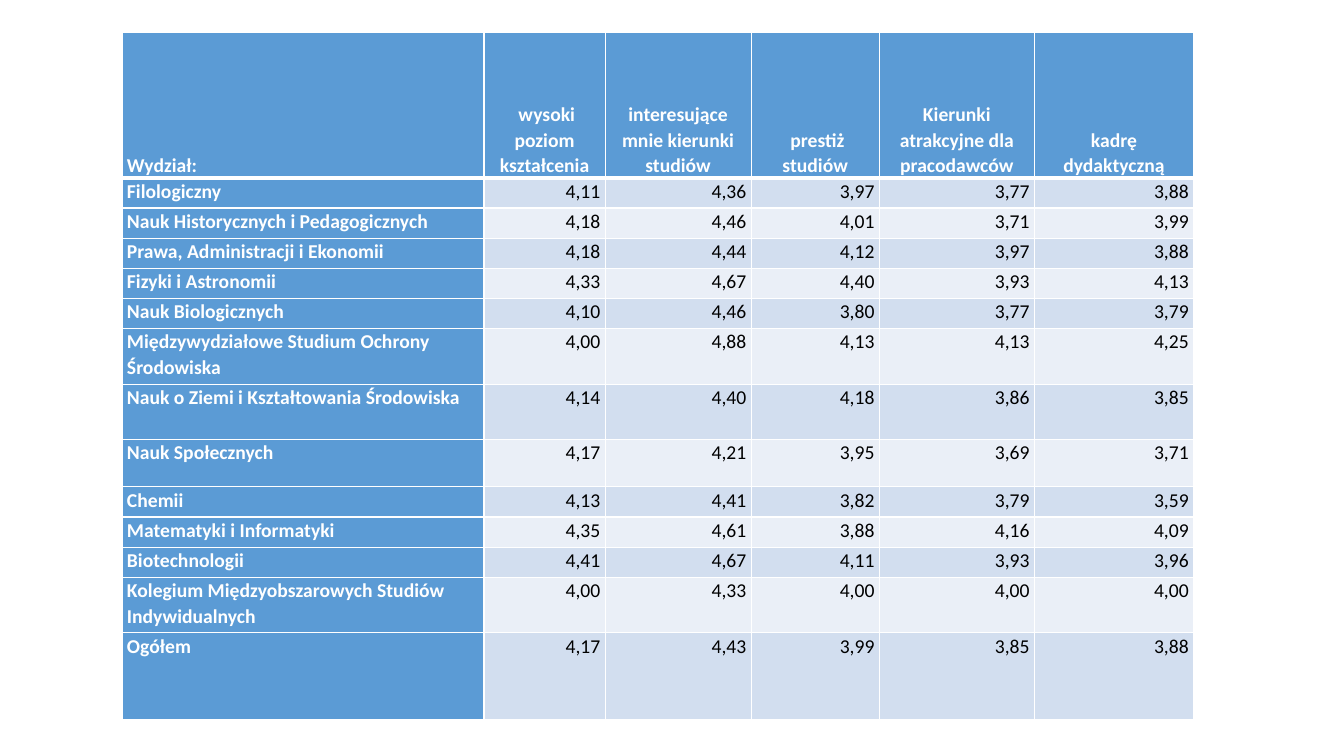
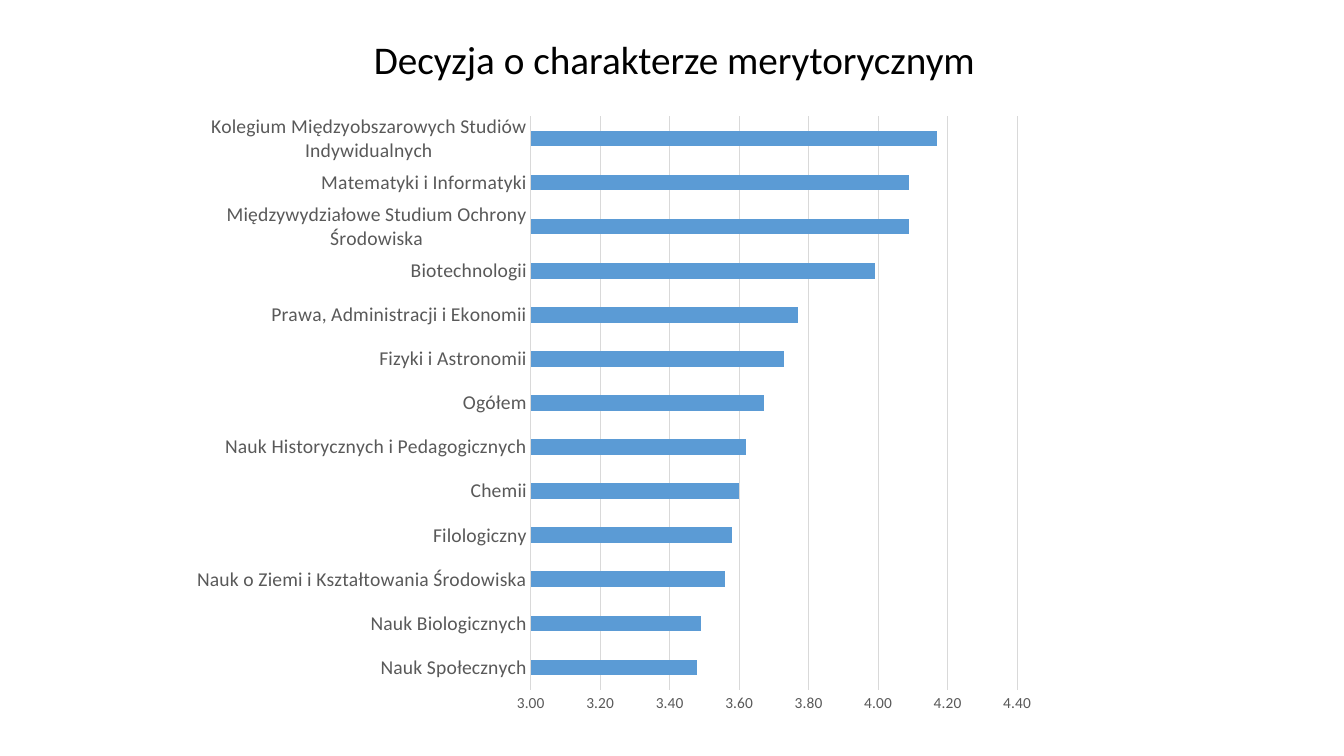
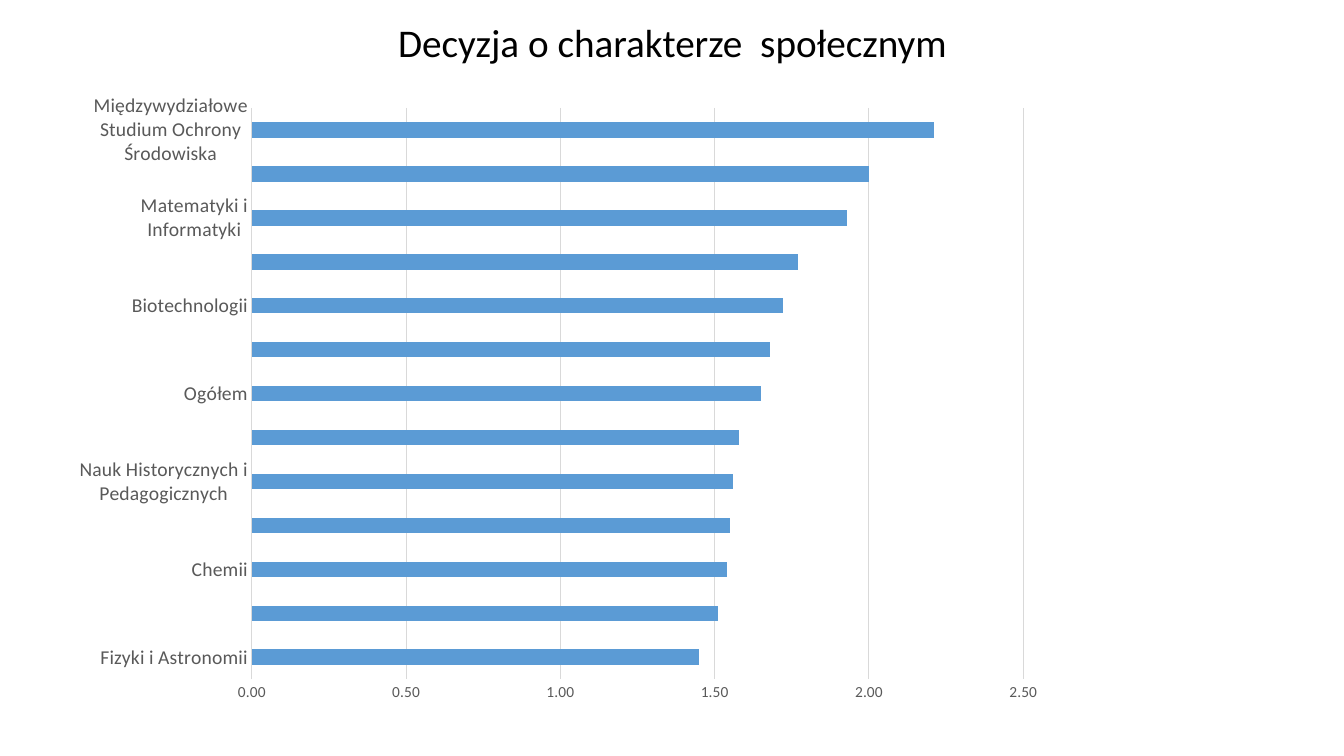
from dataclasses import dataclass
from typing import Any

from lxml.etree import SubElement as Sub
from pptx import Presentation
from pptx.chart.data import CategoryChartData as ChartData
from pptx.dml.color import RGBColor
from pptx.enum.chart import XL_CHART_TYPE as Kind, XL_TICK_MARK as Tick
from pptx.enum.text import MSO_ANCHOR as Anchor, MSO_AUTO_SIZE as Fit, PP_ALIGN as Align
from pptx.oxml import parse_xml
from pptx.oxml.ns import nsdecls, qn
from pptx.util import Cm, Pt

FONT = "Calibri"
BLUE, WHITE, BLACK = "5B9BD5", "FFFFFF", "000000"
GREY, RULE = "595959", "D9D9D9"
BANDS = ("D2DEEF", "EAEFF7")

HEADS = (
    "Wydział:",
    " wysoki poziom kształcenia",
    "interesujące mnie kierunki studiów",
    " prestiż studiów",
    "Kierunki atrakcyjne dla pracodawców",
    "kadrę dydaktyczną",
)
WIDTHS = (9.12, 3.05, 3.68, 3.23, 3.91, 4.01)
HEAD_HIGH = 3.66
LOW, TALL = 0.76, 1.4


@dataclass(frozen=True)
class Unit:
    """A faculty: its table row and its value in each chart."""
    name: str
    marks: str
    merit: float
    social: float
    high: float = LOW


UNITS = (
    Unit("Filologiczny", "4,11 4,36 3,97 3,77 3,88", 3.58, 1.58),
    Unit("Nauk Historycznych i Pedagogicznych", "4,18 4,46 4,01 3,71 3,99", 3.62, 1.56),
    Unit("Prawa, Administracji i Ekonomii", "4,18 4,44 4,12 3,97 3,88", 3.77, 1.77),
    Unit("Fizyki i Astronomii", "4,33 4,67 4,40 3,93 4,13", 3.73, 1.45),
    Unit("Nauk Biologicznych", "4,10 4,46 3,80 3,77 3,79", 3.49, 1.55),
    Unit("Międzywydziałowe Studium Ochrony Środowiska", "4,00 4,88 4,13 4,13 4,25",
         4.09, 2.21, TALL),
    Unit("Nauk o Ziemi i Kształtowania Środowiska", "4,14 4,40 4,18 3,86 3,85",
         3.56, 1.68, TALL),
    Unit("Nauk Społecznych", "4,17 4,21 3,95 3,69 3,71", 3.48, 1.51, 1.19),
    Unit("Chemii", "4,13 4,41 3,82 3,79 3,59", 3.6, 1.54),
    Unit("Matematyki i Informatyki", "4,35 4,61 3,88 4,16 4,09", 4.09, 1.93),
    Unit("Biotechnologii", "4,41 4,67 4,11 3,93 3,96", 3.99, 1.72),
    Unit("Kolegium Międzyobszarowych Studiów Indywidualnych", "4,00 4,33 4,00 4,00 4,00",
         4.17, 2.0, TALL),
    Unit("Ogółem", "4,17 4,43 3,99 3,85 3,88", 3.67, 1.65, 2.18),
)


@dataclass(frozen=True)
class Box:
    left: float
    top: float
    width: float
    height: float

    def cm(self) -> tuple[Cm, ...]:
        return tuple(map(Cm, (self.left, self.top, self.width, self.height)))


@dataclass(frozen=True)
class Page:
    """A chart slide; plot is given as shares of the chart's frame."""
    title: str
    head: Box
    frame: Box
    plot: Box
    field: str
    low: float
    top: float
    step: float


PAGES = (
    Page("Decyzja o charakterze merytorycznym", Box(2.39, 0.51, 29.21, 2.11),
         Box(4.62, 2.62, 21.89, 15.7), Box(0.4, 0.02, 0.56, 0.92), "merit", 3, 4.4, 0.2),
    Page("Decyzja o charakterze  społecznym", Box(2.34, 0.41, 29.21, 1.42),
         Box(1.55, 2.08, 25.25, 16), Box(0.19, 0.04, 0.77, 0.9), "social", 0, 2.5, 0.5),
)


def rgb(code: str) -> RGBColor:
    return RGBColor.from_string(code)


def put(item: Any, values: dict[str, Any]) -> None:
    for key, value in values.items():
        setattr(item, key, value)


def style(font: Any, size: float, color: str, bold: bool = False) -> None:
    put(font, {"name": FONT, "size": Pt(size), "bold": bold})
    font.color.rgb = rgb(color)


def paint(fill: Any, color: str) -> None:
    fill.solid()
    fill.fore_color.rgb = rgb(color)


def rule(line: Any) -> None:
    line.width = Pt(0.75)
    line.color.rgb = rgb(RULE)


def edge(cell: Any, row: int) -> None:
    """Draw white cell borders, thick between the heading and the body."""
    props = cell._tc.get_or_add_tcPr()
    thick = {"T": row == 1, "B": row == 0}
    for place, side in enumerate("LRTB"):
        width = Pt(3 if thick.get(side) else 1)
        props.insert(place, parse_xml(
            f'<a:ln{side} {nsdecls("a")} w="{width}"><a:solidFill>'
            f'<a:srgbClr val="{WHITE}"/></a:solidFill></a:ln{side}>'))


def fill_cell(cell: Any, text: str, row: int, col: int) -> None:
    head = row == 0
    label = head or col == 0
    put(cell, {
        "text": text,
        "vertical_anchor": Anchor.BOTTOM if head else Anchor.TOP,
        "margin_left": Cm(0.12), "margin_right": Cm(0.12),
        "margin_top": 0, "margin_bottom": 0,
    })
    para = cell.text_frame.paragraphs[0]
    side = Align.LEFT if col == 0 else Align.CENTER if head else Align.RIGHT
    put(para, {"alignment": side, "line_spacing": 1.07})
    style(para.runs[0].font, 14, WHITE if label else BLACK, label)
    paint(cell.fill, BLUE if label else BANDS[(row - 1) % 2])
    edge(cell, row)


def add_grid(slide: Any) -> None:
    rows = [HEADS] + [(unit.name, *unit.marks.split()) for unit in UNITS]
    highs = [HEAD_HIGH] + [unit.high for unit in UNITS]
    frame = Box(3.08, 0.82, sum(WIDTHS), sum(highs))
    grid = slide.shapes.add_table(len(rows), len(HEADS), *frame.cm()).table
    for col, width in zip(grid.columns, WIDTHS):
        col.width = Cm(width)
    for line, high in zip(grid.rows, highs):
        line.height = Cm(high)
    for row, texts in enumerate(rows):
        for col, text in enumerate(texts):
            fill_cell(grid.cell(row, col), text, row, col)


def add_title(slide: Any, page: Page) -> None:
    title = slide.shapes.title
    put(title, dict(zip(("left", "top", "width", "height"), page.head.cm())))
    frame = title.text_frame
    put(frame, {"text": page.title, "auto_size": Fit.NONE, "word_wrap": True,
                "vertical_anchor": Anchor.MIDDLE})
    para = frame.paragraphs[0]
    put(para, {"alignment": Align.CENTER, "line_spacing": 0.9})
    style(para.runs[0].font, 28, BLACK)


def set_plot(chart: Any, plot: Box) -> None:
    """Fix the inner plot area."""
    area = chart.element.find(".//" + qn("c:plotArea"))
    for old in area.findall(qn("c:layout")):
        area.remove(old)
    layout = parse_xml(f'<c:layout {nsdecls("c")}/>')
    manual = Sub(layout, qn("c:manualLayout"))
    values = {"layoutTarget": "inner", "xMode": "edge", "yMode": "edge",
              "x": plot.left, "y": plot.top, "w": plot.width, "h": plot.height}
    for key, value in values.items():
        Sub(manual, qn("c:" + key)).set("val", str(value))
    area.insert(0, layout)


def add_bars(slide: Any, page: Page) -> None:
    units = sorted(UNITS, key=lambda unit: getattr(unit, page.field))
    data = ChartData(number_format="0.00")
    data.categories = [unit.name for unit in units]
    data.add_series("Series 1", [getattr(unit, page.field) for unit in units])
    chart = slide.shapes.add_chart(Kind.BAR_CLUSTERED, *page.frame.cm(), data).chart
    put(chart, {"has_title": False, "has_legend": False})
    style(chart.font, 10, BLACK)
    bars = chart.plots[0]
    put(bars, {"gap_width": 182, "vary_by_categories": False})
    paint(bars.series[0].format.fill, BLUE)

    names, scale = chart.category_axis, chart.value_axis
    for axis, size in ((names, 14), (scale, 11)):
        put(axis, {"major_tick_mark": Tick.NONE, "minor_tick_mark": Tick.NONE})
        style(axis.tick_labels.font, size, GREY)
    names.has_major_gridlines = False
    rule(names.format.line)
    put(scale, {"minimum_scale": page.low, "maximum_scale": page.top,
                "major_unit": page.step, "has_major_gridlines": True})
    put(scale.tick_labels, {"number_format": "0.00", "number_format_is_linked": False})
    scale.format.line.fill.background()
    rule(scale.major_gridlines.format.line)
    set_plot(chart, page.plot)


def main() -> None:
    deck = Presentation()
    put(deck, {"slide_width": Cm(33.87), "slide_height": Cm(19.05)})
    bare, titled = deck.slide_layouts[6], deck.slide_layouts[5]
    add_grid(deck.slides.add_slide(bare))
    for page in PAGES:
        slide = deck.slides.add_slide(titled)
        add_title(slide, page)
        add_bars(slide, page)
    deck.save("out.pptx")


if __name__ == "__main__":
    main()
